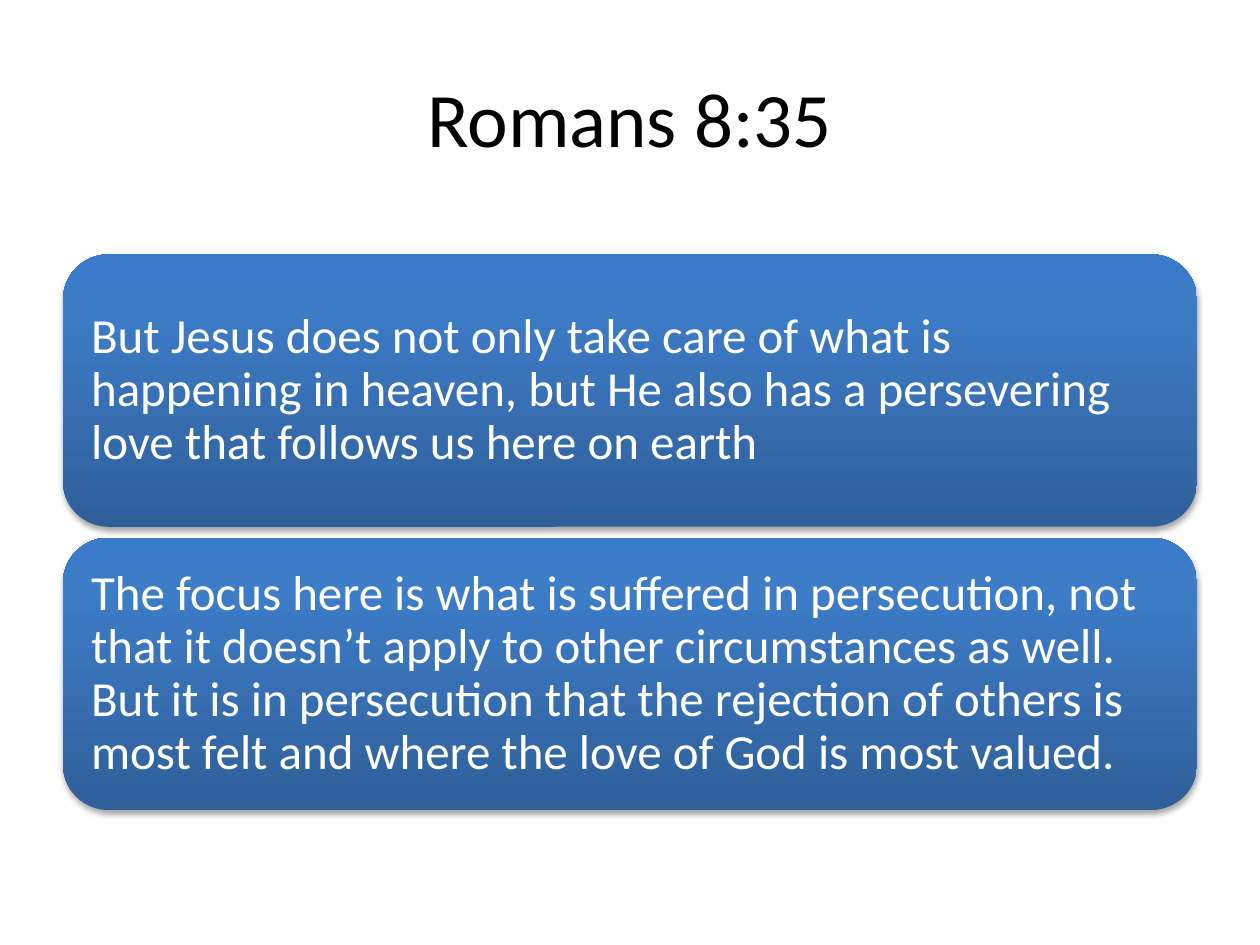
from dataclasses import dataclass

from lxml.etree import SubElement as Sub
from pptx import Presentation
from pptx.dml.color import RGBColor
from pptx.enum.shapes import MSO_SHAPE as Shape
from pptx.enum.text import MSO_ANCHOR as Anchor, PP_ALIGN as Align
from pptx.oxml.ns import qn
from pptx.util import Cm, Pt

LEFT, WIDTH = 1.27, 22.86
TOP, HEIGHT, PITCH = 5.13, 5.49, 5.71
INSET = 0.3
STOPS = [(0, "2F5F99"), (80, "3D7CC7"), (100, "3A7CCB")]


@dataclass
class Card:
    row: int
    text: str


CARDS = [
    Card(0, "But Jesus does not only take care of what is happening in heaven, "
            "but He also has a persevering love that follows us here on earth"),
    Card(1, "The focus here is what is suffered in persecution, not that it "
            "doesn’t apply to other circumstances as well. But it is in "
            "persecution that the rejection of others is most felt and where "
            "the love of God is most valued."),
]


def color(code: str) -> RGBColor:
    return RGBColor.from_string(code)


def place(shape, left: float, top: float, width: float, height: float) -> None:
    box = {"left": left, "top": top, "width": width, "height": height}
    for name, value in box.items():
        setattr(shape, name, Cm(value))


def write(shape, text: str, size: float, code: str, align) -> None:
    frame = shape.text_frame
    frame.text = text
    frame.word_wrap = True
    frame.vertical_anchor = Anchor.MIDDLE
    para = frame.paragraphs[0]
    para.alignment = align
    for name, value in {"name": "Calibri", "size": Pt(size)}.items():
        setattr(para.font, name, value)
    para.font.color.rgb = color(code)


def shade(shape) -> None:
    """Give the shape an upward gradient and a soft shadow below."""
    shape.line.fill.background()
    shape.shadow.inherit = False
    props = shape.fill._xPr
    grad = props.makeelement(qn("a:gradFill"), {"rotWithShape": "1"})
    props.find(qn("a:prstGeom")).addnext(grad)
    stops = Sub(grad, qn("a:gsLst"))
    for pos, code in STOPS:
        stop = Sub(stops, qn("a:gs"), pos=str(pos * 1000))
        Sub(stop, qn("a:srgbClr"), val=code)
    Sub(grad, qn("a:lin"), ang="16200000", scaled="0")

    glow = Sub(props.find(qn("a:effectLst")), qn("a:outerShdw"),
               blurRad=str(Pt(3.1)), dist=str(Pt(1.8)), dir="5400000",
               rotWithShape="0")
    black = Sub(glow, qn("a:srgbClr"), val="000000")
    Sub(black, qn("a:alpha"), val="35000")


def draw(slide, card: Card) -> None:
    top = TOP + card.row * PITCH
    shape = slide.shapes.add_shape(
        Shape.ROUNDED_RECTANGLE, Cm(LEFT), Cm(top), Cm(WIDTH), Cm(HEIGHT))
    shade(shape)
    write(shape, card.text, 28, "FFFFFF", Align.LEFT)
    frame = shape.text_frame
    frame.paragraphs[0].line_spacing = 0.9
    for side in ("left", "top", "right", "bottom"):
        setattr(frame, f"margin_{side}", Cm(INSET))


def main() -> None:
    deck = Presentation()
    deck.slide_width, deck.slide_height = Cm(25.4), Cm(19.05)
    slide = deck.slides.add_slide(deck.slide_layouts[5])
    title = slide.shapes.title
    place(title, LEFT, 0.76, WIDTH, 3.18)
    write(title, "Romans 8:35", 44, "000000", Align.CENTER)
    for card in CARDS:
        draw(slide, card)
    deck.save("out.pptx")


if __name__ == "__main__":
    main()
